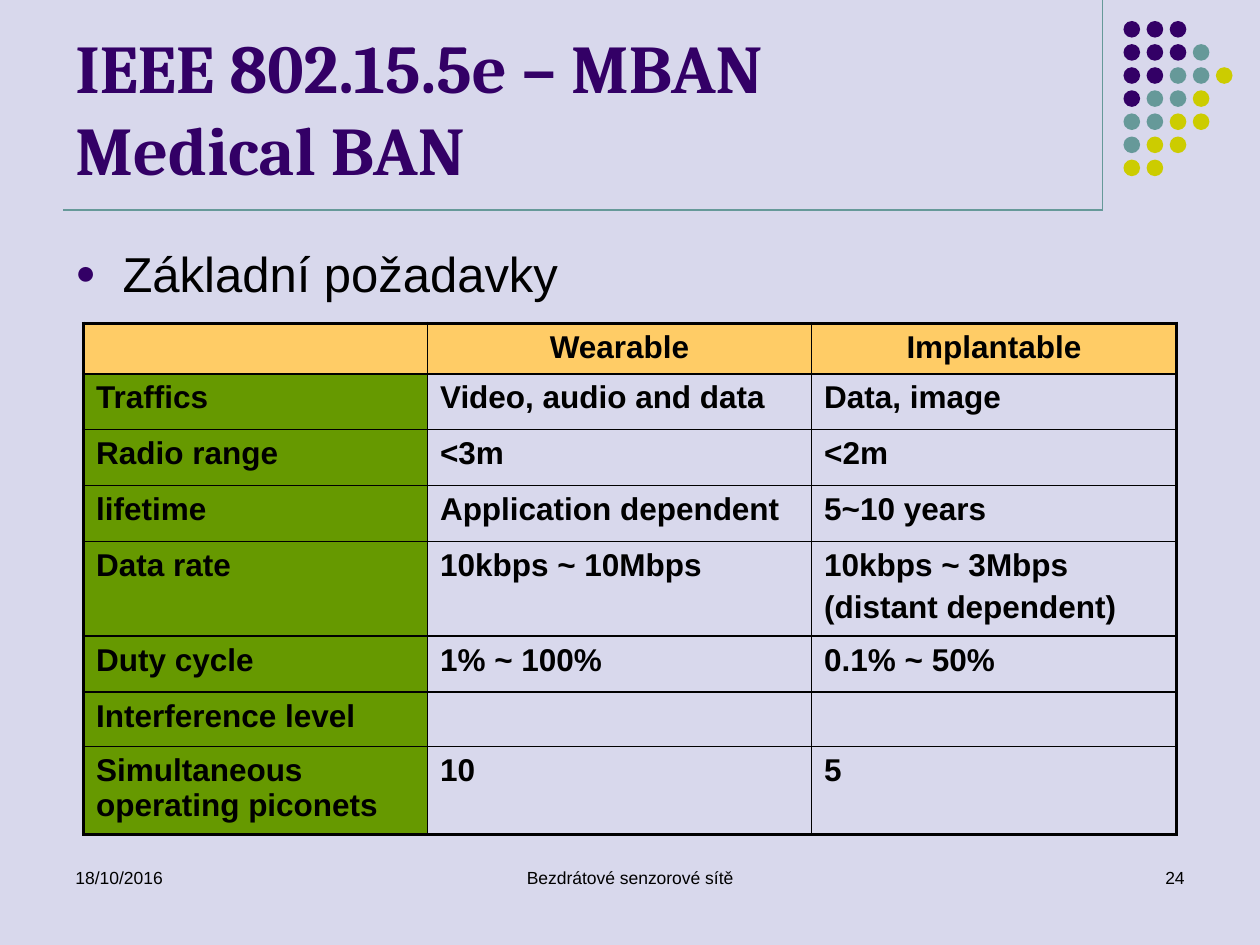
"""Build the slide on basic MBAN requirements for wearable and implantable devices."""
from itertools import accumulate

from lxml import etree
from pptx import Presentation
from pptx.dml.color import RGBColor
from pptx.enum import shapes, text
from pptx.oxml import ns
from pptx.util import Pt

BLACK = RGBColor(0x00, 0x00, 0x00)
PURPLE = RGBColor(0x33, 0x00, 0x66)
TEAL = RGBColor(0x66, 0x99, 0x99)
YELLOW = RGBColor(0xCC, 0xCC, 0x00)
LAVENDER = RGBColor(0xD8, 0xD8, 0xEC)
ORANGE = RGBColor(0xFF, 0xCC, 0x66)
GREEN = RGBColor(0x66, 0x99, 0x00)

LEFT, CENTER, RIGHT = (text.PP_ALIGN.LEFT, text.PP_ALIGN.CENTER, text.PP_ALIGN.RIGHT)

TITLE = "IEEE 802.15.5e – MBAN\vMedical BAN"
BULLET = "Základní požadavky"
FOOTERS = [
    ("18/10/2016", 36, 168, LEFT),
    ("Bezdrátové senzorové sítě", 246, 228, CENTER),
    ("24", 516, 168, RIGHT),
]
REQUIREMENTS = [
    ("", "Wearable", "Implantable"),
    ("Traffics", "Video, audio and data", "Data, image"),
    ("Radio range", "<3m", "<2m"),
    ("lifetime", "Application dependent", "5~10 years"),
    ("Data rate", "10kbps ~ 10Mbps", "10kbps ~ 3Mbps\n(distant dependent)"),
    ("Duty cycle", "1% ~ 100%", "0.1% ~ 50%"),
    ("Interference level", "", ""),
    ("Simultaneous operating piconets", "10", "5"),
]
COLUMN_WIDTHS = [196.5, 219.5, 208.5]
ROW_HEIGHTS = [27, 32, 32, 32, 51, 32, 31, 48]
TABLE_LEFT, TABLE_TOP = 47.75, 184.75
DOT_ROWS = ["PPP", "PPPT", "PPTTY", "PTTY", "TTYY", "TYY", "YY"]
DOT_COLORS = {"P": PURPLE, "T": TEAL, "Y": YELLOW}
DOT_LEFT, DOT_TOP, DOT_SIZE, DOT_PITCH = 642, 12, 9.5, 13.2
RULES = [(630, 0, 630, 120), (36, 120, 630, 120)]


def write(frame, content, size=18, font="Arial", color=BLACK, bold=False,
          align=LEFT, anchor=text.MSO_ANCHOR.TOP):
    frame.word_wrap = True
    frame.vertical_anchor = anchor
    for index, line in enumerate(content.split("\n")):
        paragraph = frame.add_paragraph() if index else frame.paragraphs[0]
        paragraph.text = line
        paragraph.alignment = align
        paragraph.space_before = Pt(size * 0.2 if index else 0)
        for run in paragraph.runs:
            run.font.size, run.font.name = Pt(size), font
            run.font.bold, run.font.color.rgb = bold, color


def add_text(slide, box, content, **style):
    frame = slide.shapes.add_textbox(*map(Pt, box)).text_frame
    write(frame, content, **style)
    return frame


def add_bullet(paragraph, indent, color, percent):
    properties = paragraph._p.get_or_add_pPr()
    properties.set("marL", str(Pt(indent)))
    properties.set("indent", str(-Pt(indent)))
    bullet_color = etree.SubElement(properties, ns.qn("a:buClr"))
    etree.SubElement(bullet_color, ns.qn("a:srgbClr"), val=str(color))
    etree.SubElement(properties, ns.qn("a:buSzPct"), val=str(percent * 1000))
    etree.SubElement(properties, ns.qn("a:buFont"), typeface="Arial")
    etree.SubElement(properties, ns.qn("a:buChar"), char="●")


def set_borders(cell, widths):
    properties = cell._tc.get_or_add_tcPr()
    for index, (side, width) in enumerate(widths.items()):
        line = etree.Element(ns.qn(f"a:ln{side}"), w=str(Pt(width)))
        fill = etree.SubElement(line, ns.qn("a:solidFill"))
        etree.SubElement(fill, ns.qn("a:srgbClr"), val=str(BLACK))
        properties.insert(index, line)


def add_rule(slide, ends):
    rule = slide.shapes.add_connector(shapes.MSO_CONNECTOR.STRAIGHT, *map(Pt, ends))
    rule.line.color.rgb, rule.line.width = TEAL, Pt(0.75)
    etree.SubElement(rule._element.spPr, ns.qn("a:effectLst"))


def add_dots(slide):
    for row, codes in enumerate(DOT_ROWS):
        for column, code in enumerate(codes):
            box = (DOT_LEFT + column * DOT_PITCH, DOT_TOP + row * DOT_PITCH, DOT_SIZE, DOT_SIZE)
            dot = slide.shapes.add_shape(shapes.MSO_SHAPE.OVAL, *map(Pt, box))
            dot.shadow.inherit = False
            dot.fill.solid()
            dot.fill.fore_color.rgb = DOT_COLORS[code]
            dot.line.fill.background()


def add_requirements(slide):
    last_row, last_column = len(ROW_HEIGHTS) - 1, len(COLUMN_WIDTHS) - 1
    box = (TABLE_LEFT, TABLE_TOP, sum(COLUMN_WIDTHS), sum(ROW_HEIGHTS))
    table = slide.shapes.add_table(last_row + 1, last_column + 1, *map(Pt, box)).table
    table.first_row = table.horz_banding = False
    for column, width in zip(table.columns, COLUMN_WIDTHS):
        column.width = Pt(width)
    for row, (height, values) in enumerate(zip(ROW_HEIGHTS, REQUIREMENTS)):
        table.rows[row].height = Pt(height)
        for column, value in enumerate(values):
            cell = table.cell(row, column)
            write(cell.text_frame, value, bold=True, align=LEFT if row else CENTER)
            color = ORANGE if row == 0 else GREEN if column == 0 else None
            if color is None:
                cell.fill.background()
            else:
                cell.fill.solid()
                cell.fill.fore_color.rgb = color
            outer = {"L": column == 0, "R": column == last_column,
                     "T": row == 0, "B": row == last_row}
            set_borders(cell, {side: 2.25 if edge else 1 for side, edge in outer.items()})


def main():
    presentation = Presentation()
    presentation.slide_width, presentation.slide_height = Pt(720), Pt(540)
    slide = presentation.slides.add_slide(presentation.slide_layouts[6])
    slide.background.fill.solid()
    slide.background.fill.fore_color.rgb = LAVENDER
    for ends in RULES:
        add_rule(slide, ends)
    add_dots(slide)
    add_text(slide, (36, 9.5, 594, 102), TITLE, size=39, font="Cambria", color=PURPLE,
             bold=True, anchor=text.MSO_ANCHOR.BOTTOM)
    body = add_text(slide, (36, 135.5, 648, 49.5), BULLET, size=28)
    add_bullet(body.paragraphs[0], 27, PURPLE, 70)
    for content, left, width, align in FOOTERS:
        add_text(slide, (left, 492, width, 36), content, size=10, align=align)
    add_requirements(slide)
    presentation.save("out.pptx")


if __name__ == "__main__":
    main()
